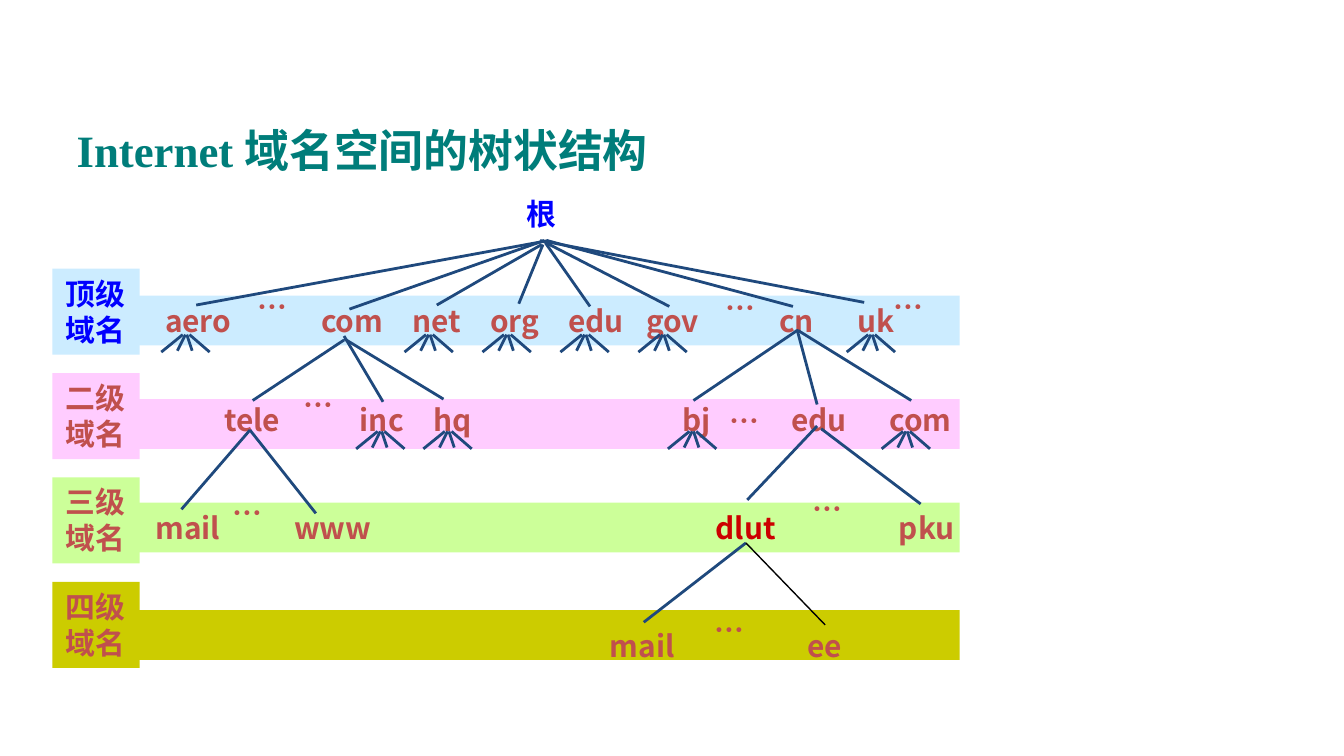
"""Build the slide that shows the Internet domain name space as a tree."""
from dataclasses import dataclass

from lxml.etree import SubElement
from pptx import Presentation
from pptx.dml.color import RGBColor
from pptx.enum.shapes import MSO_CONNECTOR, MSO_SHAPE
from pptx.enum.text import MSO_ANCHOR, MSO_AUTO_SIZE, PP_ALIGN
from pptx.oxml.ns import qn
from pptx.shapes.autoshape import Shape
from pptx.slide import Slide
from pptx.util import Inches, Pt


@dataclass(frozen=True)
class Theme:
    """Colours, fonts and sizes of the slide."""
    title: str = "007D7A"
    blue: str = "0000FF"
    label: str = "C0504D"
    highlight: str = "CC0000"
    branch: str = "1F497D"
    thin_branch: str = "000000"
    title_font: str = "Times New Roman"
    label_font: str = "Noto Sans CJK SC"
    title_size: float = 24
    label_size: float = 16
    branch_width: float = 1.5
    thin_width: float = 0.75


@dataclass(frozen=True)
class Label:
    """A domain name or ellipsis."""
    text: str
    left: float
    top: float
    width: float = 0.42
    color: str = Theme.label
    align: PP_ALIGN = PP_ALIGN.LEFT
    wrap: bool = False


@dataclass(frozen=True)
class Tier:
    """A level of the tree with its band, names and fans of subdomains."""
    name: str
    fill: str
    band_top: float
    names_top: float
    names: tuple[tuple[str, float, float], ...]
    fan_top: float = 0
    fans: tuple[float, ...] = ()
    color: str = Theme.label


@dataclass(frozen=True)
class Branch:
    """A line from a parent domain to a child domain."""
    start: tuple[float, float]
    end: tuple[float, float]
    color: str = Theme.branch
    width: float = Theme.branch_width


THEME = Theme()
FIRST_TIER_TOP, LAST_TIER_TOP = 2.0, 4.33
FAN_OFFSETS = ((-0.02, -0.18, 0.13), (0, -0.06, 0.12), (0.01, 0.05, 0.12), (0.03, 0.18, 0.13))

TIERS = (
    Tier("顶级\n域名", "CCECFF", 2.2, 2.2,
         (("aero", 1.13, 0.7), ("com", 2.29, 0.69), ("net", 2.97, 0.57),
          ("org", 3.55, 0.59), ("edu", 4.13, 0.63), ("gov", 4.71, 0.63),
          ("cn", 5.7, 0.46), ("uk", 6.28, 0.48)),
         2.49, (1.38, 3.19, 3.77, 4.35, 4.93, 6.48), THEME.blue),
    Tier("二级\n域名", "FFCCFF", 2.97, 2.94,
         (("tele", 1.57, 0.66), ("inc", 2.58, 0.64), ("hq", 3.13, 0.5),
          ("bj", 4.98, 0.42), ("edu", 5.79, 0.63), ("com", 6.52, 0.69)),
         3.21, (2.83, 3.33, 5.15, 6.74)),
    Tier("三级\n域名", "CCFF99", 3.74, 3.74,
         (("mail", 1.06, 0.69), ("www", 2.09, 0.78), ("pku", 6.59, 0.63))),
    Tier("四级\n域名", "CCCC00", 4.54, 4.62,
         (("mail", 4.44, 0.69), ("ee", 5.91, 0.46))),
)

EXTRA_LABELS = (
    Label("根", 3.81, 1.41, 0.44, THEME.blue, PP_ALIGN.CENTER),
    Label("dlut", 5.12, 3.74, 0.86, THEME.highlight, PP_ALIGN.CENTER, True),
    *(Label("…", left, top) for left, top in (
        (1.82, 2.1), (5.3, 2.11), (6.55, 2.1), (2.16, 2.83),
        (5.33, 2.95), (1.63, 3.63), (5.95, 3.6), (5.22, 4.5))),
)

BRANCHES = (
    Branch((4.08, 1.79), (1.46, 2.27)),
    Branch((4.05, 1.79), (2.6, 2.3)),
    Branch((4.03, 1.82), (3.25, 2.27)),
    Branch((4.04, 1.82), (3.86, 2.26)),
    Branch((4.06, 1.81), (4.39, 2.28)),
    Branch((4.05, 1.8), (4.98, 2.28)),
    Branch((4.07, 1.79), (5.9, 2.28)),
    Branch((4.02, 1.79), (6.43, 2.25)),
    Branch((2.56, 2.53), (1.88, 2.98)),
    Branch((2.56, 2.5), (2.85, 2.99)),
    Branch((2.56, 2.52), (3.3, 2.97)),
    Branch((5.93, 2.46), (5.16, 2.98)),
    Branch((5.93, 2.45), (6.08, 3.01)),
    Branch((5.94, 2.46), (6.78, 2.98)),
    Branch((1.86, 3.2), (1.35, 3.79)),
    Branch((1.86, 3.2), (2.35, 3.82)),
    Branch((6.08, 3.17), (5.56, 3.72)),
    Branch((6.11, 3.19), (6.85, 3.75)),
    Branch((5.55, 4.04), (4.79, 4.63)),
    Branch((5.55, 4.04), (6.14, 4.65), THEME.thin_branch, THEME.thin_width),
)


def write_text(shape: Shape, text: str, *, color: str = THEME.label,
               font: str = THEME.label_font, size: float = THEME.label_size,
               align: PP_ALIGN = PP_ALIGN.LEFT, wrap: bool = False,
               auto_size: MSO_AUTO_SIZE = MSO_AUTO_SIZE.SHAPE_TO_FIT_TEXT) -> None:
    """Fill a shape with bold text, one paragraph a line."""
    frame = shape.text_frame
    frame.text = text
    frame.word_wrap = wrap
    frame.auto_size = auto_size
    frame.vertical_anchor = MSO_ANCHOR.TOP
    frame.margin_left = frame.margin_right = Inches(0.1)
    frame.margin_top = frame.margin_bottom = Inches(0.05)
    for paragraph in frame.paragraphs:
        paragraph.alignment = align
        for run in paragraph.runs:
            run.font.name = font
            run.font.size = Pt(size)
            run.font.bold = True
            run.font.color.rgb = RGBColor.from_string(color)
            east_asian = SubElement(run.font._element, qn("a:ea"))
            east_asian.set("typeface", THEME.label_font)


def draw_rectangle(slide: Slide, left: float, top: float, width: float,
                   height: float, fill: str) -> Shape:
    """Draw a plain filled rectangle."""
    shape = slide.shapes.add_shape(MSO_SHAPE.RECTANGLE, Inches(left), Inches(top),
                                   Inches(width), Inches(height))
    shape.shadow.inherit = False
    shape.fill.solid()
    shape.fill.fore_color.rgb = RGBColor.from_string(fill)
    shape.line.fill.background()
    return shape


def draw_label(slide: Slide, label: Label) -> None:
    """Write a label in a box of its own."""
    shape = slide.shapes.add_textbox(Inches(label.left), Inches(label.top),
                                     Inches(label.width), Inches(0.37))
    write_text(shape, label.text, color=label.color, align=label.align, wrap=label.wrap)


def draw_branch(slide: Slide, branch: Branch) -> None:
    """Draw a branch as a straight line."""
    points = (Inches(value) for value in branch.start + branch.end)
    connector = slide.shapes.add_connector(MSO_CONNECTOR.STRAIGHT, *points)
    connector.line.color.rgb = RGBColor.from_string(branch.color)
    connector.line.width = Pt(branch.width)
    SubElement(connector._element.spPr, qn("a:effectLst"))


def draw_tier(slide: Slide, tier: Tier, top: float) -> None:
    """Draw a tier's band, heading, names and fans."""
    draw_rectangle(slide, 1, tier.band_top, 6.14, 0.37, tier.fill)
    heading = draw_rectangle(slide, 0.39, top, 0.65, 0.64, tier.fill)
    write_text(heading, tier.name, color=tier.color)
    for text, left, width in tier.names:
        draw_label(slide, Label(text, left, tier.names_top, width))
    for center in tier.fans:
        for start, end, drop in FAN_OFFSETS:
            draw_branch(slide, Branch((center + start, tier.fan_top),
                                      (center + end, tier.fan_top + drop)))


def main() -> None:
    """Build and save the presentation."""
    presentation = Presentation()
    presentation.slide_width = Inches(10)
    presentation.slide_height = Inches(10 * 9 / 16)
    slide = presentation.slides.add_slide(presentation.slide_layouts[5])
    title = slide.shapes.title
    title.left, title.top = Inches(0.47), Inches(0.86)
    title.width, title.height = Inches(4.92), Inches(0.55)
    write_text(title, "Internet 域名空间的树状结构", color=THEME.title,
               font=THEME.title_font, size=THEME.title_size, wrap=True,
               auto_size=MSO_AUTO_SIZE.NONE)
    tier_step = (LAST_TIER_TOP - FIRST_TIER_TOP) / (len(TIERS) - 1)
    for index, tier in enumerate(TIERS):
        draw_tier(slide, tier, FIRST_TIER_TOP + index * tier_step)
    for label in EXTRA_LABELS:
        draw_label(slide, label)
    for branch in BRANCHES:
        draw_branch(slide, branch)
    presentation.save("out.pptx")


if __name__ == "__main__":
    main()
